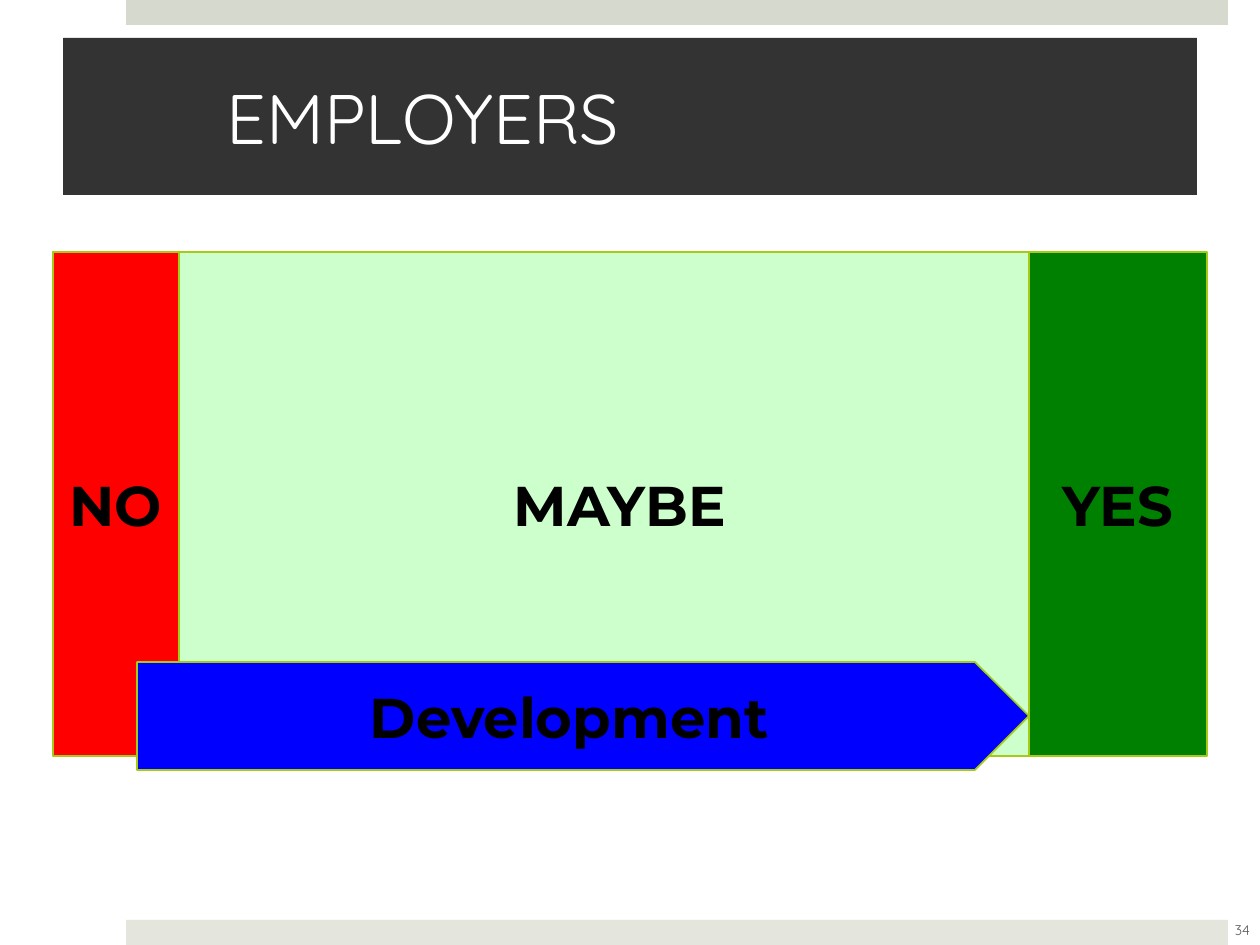
"""Build the employers slide with its three answer zones and development arrow."""
from dataclasses import dataclass

from pptx import Presentation
from pptx import util as u
from pptx.dml.color import RGBColor
from pptx.enum import shapes, text
from pptx.slide import Slide

WHITE = RGBColor(0xFF, 0xFF, 0xFF)
BLACK = RGBColor(0, 0, 0)
CHARCOAL = RGBColor(0x33, 0x33, 0x33)
GREY = RGBColor(0x59, 0x59, 0x59)
TOP_BAR = RGBColor(0xD6, 0xD9, 0xCD)
BOTTOM_BAR = RGBColor(0xE4, 0xE6, 0xDE)
LIME = RGBColor(0xA5, 0xCC, 0x12)
MINT = RGBColor(0xCC, 0xFF, 0xCC)
RED = RGBColor(0xFF, 0, 0)
GREEN = RGBColor(0, 0x80, 0)
BLUE = RGBColor(0, 0, 0xFF)
RECTANGLE = shapes.MSO_SHAPE.RECTANGLE
PENTAGON = shapes.MSO_SHAPE.PENTAGON


def px(*lengths):
    return [u.Emu(round(length * 914400 / 126)) for length in lengths]


@dataclass
class Painter:
    """Draw styled elements on the current slide."""
    page: Slide
    heading_font: str = "Quicksand"
    label_font: str = "Montserrat"

    def label(self, shape, words, font, size, color, bold=False,
              align=text.PP_ALIGN.CENTER):
        frame = shape.text_frame
        frame.text = words
        frame.word_wrap = True
        frame.auto_size = text.MSO_AUTO_SIZE.NONE
        frame.vertical_anchor = text.MSO_ANCHOR.MIDDLE
        para = frame.paragraphs[0]
        para.alignment = align
        span = para.runs[0]
        span.font.name = font
        span.font.size = u.Pt(size)
        span.font.bold = bold
        span.font.color.rgb = color

    def title(self, words, *bounds):
        box = self.page.shapes.title
        box.left, box.top, box.width, box.height = px(*bounds)
        box.fill.solid()
        box.fill.fore_color.rgb = CHARCOAL
        self.label(box, words, self.heading_font, 40, WHITE, align=text.PP_ALIGN.LEFT)
        box.text_frame.margin_left = u.Inches(1.3)
        box.text_frame.margin_right = u.Inches(0.3)

    def bar(self, color, *bounds, kind=RECTANGLE):
        box = self.page.shapes.add_shape(kind, *px(*bounds))
        box.shadow.inherit = False
        box.fill.solid()
        box.fill.fore_color.rgb = color
        box.line.fill.background()
        return box

    def zone(self, words, color, *bounds, kind=RECTANGLE):
        box = self.bar(color, *bounds, kind=kind)
        box.line.color.rgb = LIME
        box.line.width = u.Pt(1)
        self.label(box, words, self.label_font, 32, BLACK, bold=True)

    def page_number(self, words, *bounds):
        box = self.page.shapes.add_textbox(*px(*bounds))
        self.label(box, words, self.heading_font, 8, GREY)


def main():
    deck = Presentation()
    deck.slide_width, deck.slide_height = px(1260, 945)
    painter = Painter(deck.slides.add_slide(deck.slide_layouts[5]))
    painter.bar(TOP_BAR, 126, 0, 1102, 25)
    painter.bar(BOTTOM_BAR, 126, 920, 1102, 25)
    painter.title("EMPLOYERS", 63, 38, 1134, 157)
    for words, color, left, width in (("MAYBE", MINT, 179, 882),
                                      ("NO", RED, 53, 126),
                                      ("YES", GREEN, 1029, 178)):
        painter.zone(words, color, left, 252, width, 504)
    painter.zone("Development", BLUE, 137, 662, 892, 108, kind=PENTAGON)
    painter.page_number("34", 1211, 905, 63, 50)
    deck.save("out.pptx")


if __name__ == "__main__":
    main()
